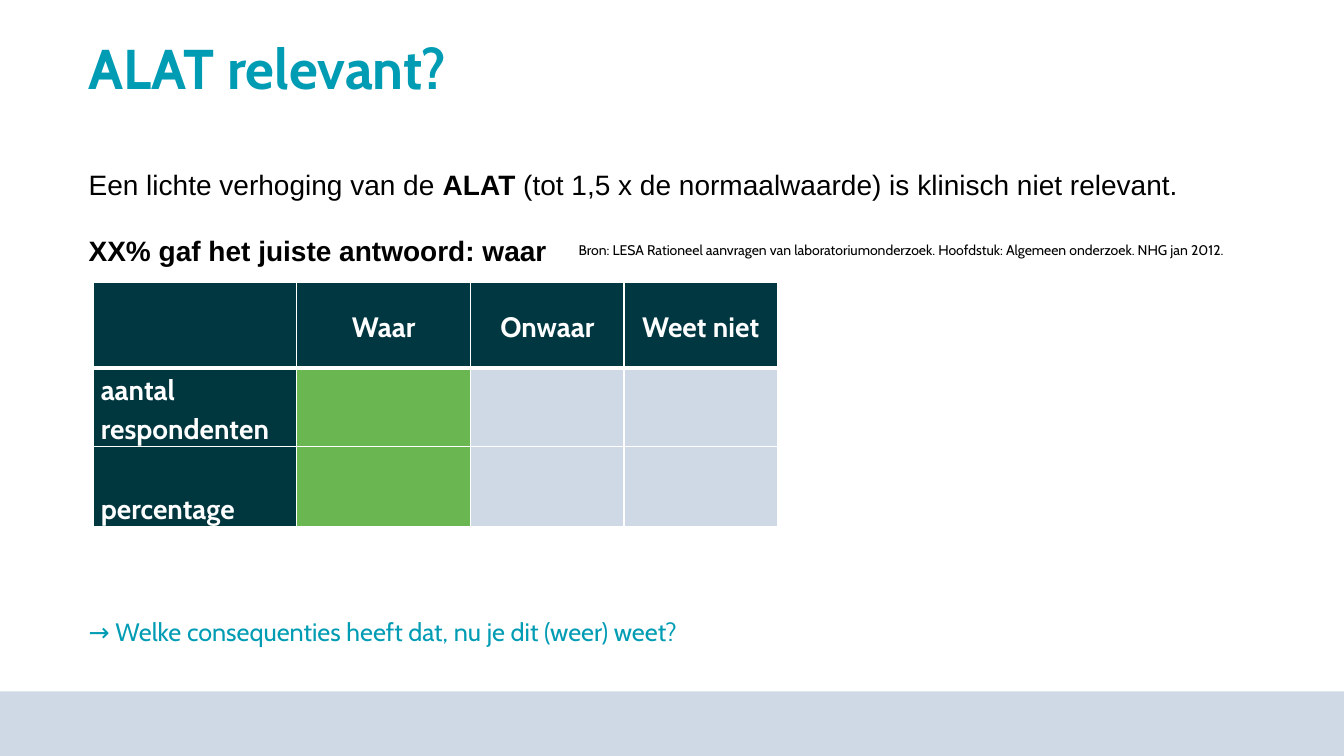
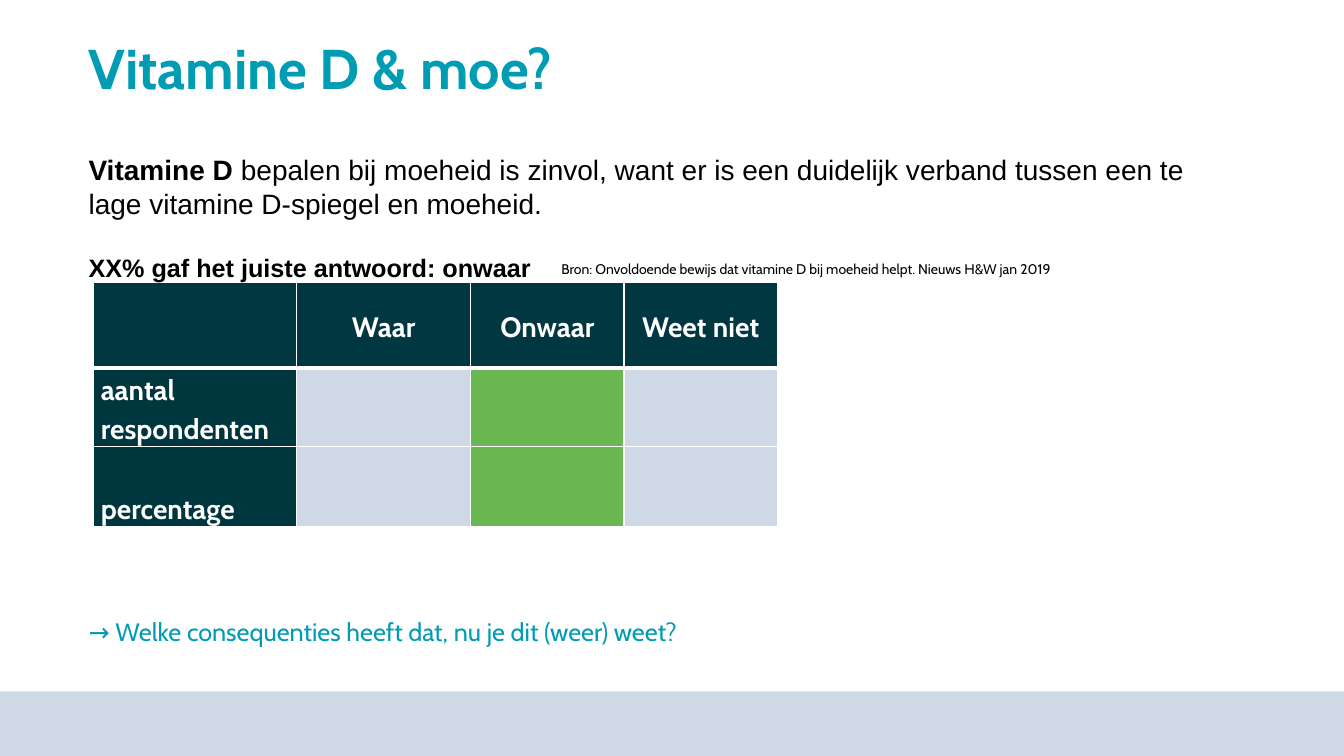
"""Build two quiz-result slides with a shared title, answer table and footer band."""
from lxml import etree
from pptx import Presentation
from pptx import util as u
from pptx.dml.color import RGBColor
from pptx.enum import shapes, text
from pptx.oxml.ns import qn

COLORS = {
    "teal": "009CB4",
    "header": "003741",
    "label": "00373E",
    "correct": "6AB650",
    "pale": "CED9E5",
    "white": "FFFFFF",
    "black": "000000",
}
HEADING_FONT = "Cabin"
BODY_FONT = "Arial"
LEFT = 0.78
ANSWERS = ["Waar", "Onwaar", "Weet niet"]
ROW_LABELS = ["aantal\nrespondenten", "percentage"]
COL_WIDTHS = [2.01, 1.73, 1.52, 1.52]
ROW_HEIGHTS = [0.85, 0.72, 0.8]
QUESTION = "→ Welke consequenties heeft dat, nu je dit (weer) weet?"

SLIDES = [
    {
        "title": "ALAT relevant?",
        "statement": [
            ("Een lichte verhoging van de ", False),
            ("ALAT", True),
            (" (tot 1,5 x de normaalwaarde) is klinisch niet relevant.", False),
        ],
        "statement_box": (LEFT, 1.6, 11.61, 1.11),
        "result": "XX% gaf het juiste antwoord: waar",
        "result_size": 20,
        "source": "Bron: LESA Rationeel aanvragen van laboratoriumonderzoek. "
                  "Hoofdstuk: Algemeen onderzoek. NHG jan 2012.",
        "source_box": (5.64, 2.35, 7.17, 0.27),
        "correct": "Waar",
    },
    {
        "title": "Vitamine D & moe?",
        "statement": [
            ("Vitamine D ", True),
            ("bepalen bij moeheid is zinvol, want er is een duidelijk verband "
             "tussen een te lage vitamine D-spiegel en moeheid.", False),
        ],
        "statement_box": (LEFT, 1.45, 11.61, 1.41),
        "result": "XX% gaf het juiste antwoord: onwaar",
        "result_size": 18,
        "source": "Bron: Onvoldoende bewijs dat vitamine D bij moeheid helpt. "
                  "Nieuws H&W jan 2019",
        "source_box": (5.47, 2.54, 5.53, 0.27),
        "correct": "Onwaar",
    },
]


def rgb(name):
    """Return the named colour."""
    return RGBColor.from_string(COLORS[name])


def inches(values):
    """Convert a sequence of numbers to lengths."""
    return [u.Inches(v) for v in values]


def style_run(r, size, color, font=HEADING_FONT, bold=False):
    """Format one run."""
    r.font.name = font
    r.font.size = u.Pt(size)
    r.font.bold = bold
    r.font.color.rgb = rgb(color)


def add_band(slide, layout, prs):
    """Place the footer band behind everything on the layout."""
    top = u.Inches(6.86)
    sp = slide.shapes.add_shape(shapes.MSO_SHAPE.RECTANGLE, 0, top,
                                prs.slide_width, prs.slide_height - top)
    sp.shadow.inherit = False
    sp.fill.solid()
    sp.fill.fore_color.rgb = rgb("pale")
    sp.line.fill.background()
    layout.shapes.element.insert(2, sp.element)


def set_title(slide, title):
    """Fill and format the title placeholder."""
    sp = slide.shapes.title
    sp.left, sp.top, sp.width, sp.height = inches((LEFT, 0.36, 10.68, 0.71))
    tf = sp.text_frame
    tf.text = title
    tf.auto_size = text.MSO_AUTO_SIZE.NONE
    tf.vertical_anchor = text.MSO_ANCHOR.TOP
    p = tf.paragraphs[0]
    p.alignment = text.PP_ALIGN.LEFT
    p.line_spacing = 0.9
    style_run(p.runs[0], 40, "teal", bold=True)


def add_textbox(slide, box):
    """Add a wrapping text box and return its text frame."""
    tf = slide.shapes.add_textbox(*inches(box)).text_frame
    tf.word_wrap = True
    return tf


def add_line(slide, box, content, size, color):
    """Add a text box with one plain line."""
    tf = add_textbox(slide, box)
    tf.text = content
    style_run(tf.paragraphs[0].runs[0], size, color)


def add_statement(slide, data):
    """Add the statement and, below it, the share of correct answers."""
    tf = add_textbox(slide, data["statement_box"])
    tf.vertical_anchor = text.MSO_ANCHOR.MIDDLE
    for content, bold in data["statement"]:
        r = tf.paragraphs[0].add_run()
        r.text = content
        style_run(r, 20, "black", BODY_FONT, bold)
    p = tf.add_paragraph()
    p.text = data["result"]
    p.space_before = u.Pt(23)
    style_run(p.runs[0], data["result_size"], "black", BODY_FONT, True)


def set_borders(cell, **widths):
    """Draw white borders of 1 pt unless a side has its own width."""
    tc_pr = cell._tc.get_or_add_tcPr()
    for side in "LRTB":
        ln = etree.SubElement(tc_pr, qn(f"a:ln{side}"),
                              w=str(u.Pt(widths.get(side, 1))))
        fill = etree.SubElement(ln, qn("a:solidFill"))
        etree.SubElement(fill, qn("a:srgbClr"), val=COLORS["white"])


def format_cell(cell, fill, content="", anchor=text.MSO_ANCHOR.TOP,
                align=text.PP_ALIGN.LEFT):
    """Fill a cell and set its bold white text."""
    cell.fill.solid()
    cell.fill.fore_color.rgb = rgb(fill)
    cell.margin_left = cell.margin_right = u.Inches(0.07)
    cell.margin_top = cell.margin_bottom = 0
    cell.vertical_anchor = anchor
    cell.text = content
    for p in cell.text_frame.paragraphs:
        p.alignment = align
        p.line_spacing = 1.15
        for r in p.runs:
            style_run(r, 20, "white", bold=True)


def add_answer_table(slide, correct):
    """Add the answer table with the correct column highlighted."""
    size = (sum(COL_WIDTHS), sum(ROW_HEIGHTS))
    table = slide.shapes.add_table(len(ROW_HEIGHTS), len(COL_WIDTHS),
                                   *inches((0.93, 2.8, *size))).table
    table.horz_banding = False
    for col, width in zip(table.columns, COL_WIDTHS):
        col.width = u.Inches(width)
    for row, height in zip(table.rows, ROW_HEIGHTS):
        row.height = u.Inches(height)
    for i, row in enumerate(table.rows):
        heavy = {0: {"B": 3}, 1: {"T": 3}}.get(i, {})
        for cell in row.cells:
            set_borders(cell, **heavy)
    for j, answer in enumerate(["", *ANSWERS]):
        format_cell(table.cell(0, j), "header", answer,
                    text.MSO_ANCHOR.MIDDLE, text.PP_ALIGN.CENTER)
    for i, label in enumerate(ROW_LABELS, 1):
        format_cell(table.cell(i, 0), "label", label, text.MSO_ANCHOR.BOTTOM)
        for j, answer in enumerate(ANSWERS, 1):
            format_cell(table.cell(i, j),
                        "correct" if answer == correct else "pale")


def add_quiz_slide(prs, layout, data):
    """Add one slide with the result of a quiz question."""
    slide = prs.slides.add_slide(layout)
    set_title(slide, data["title"])
    add_answer_table(slide, data["correct"])
    add_statement(slide, data)
    add_line(slide, data["source_box"], data["source"], 10, "black")
    add_line(slide, (LEFT, 6.07, 9.71, 0.4), QUESTION, 18, "teal")
    return slide


def main():
    """Build and save the presentation."""
    prs = Presentation()
    prs.slide_width, prs.slide_height = inches((13.33, 7.5))
    layout = prs.slide_layouts.get_by_name("Title Only")
    slides = [add_quiz_slide(prs, layout, data) for data in SLIDES]
    add_band(slides[0], layout, prs)
    prs.save("out.pptx")


if __name__ == "__main__":
    main()
